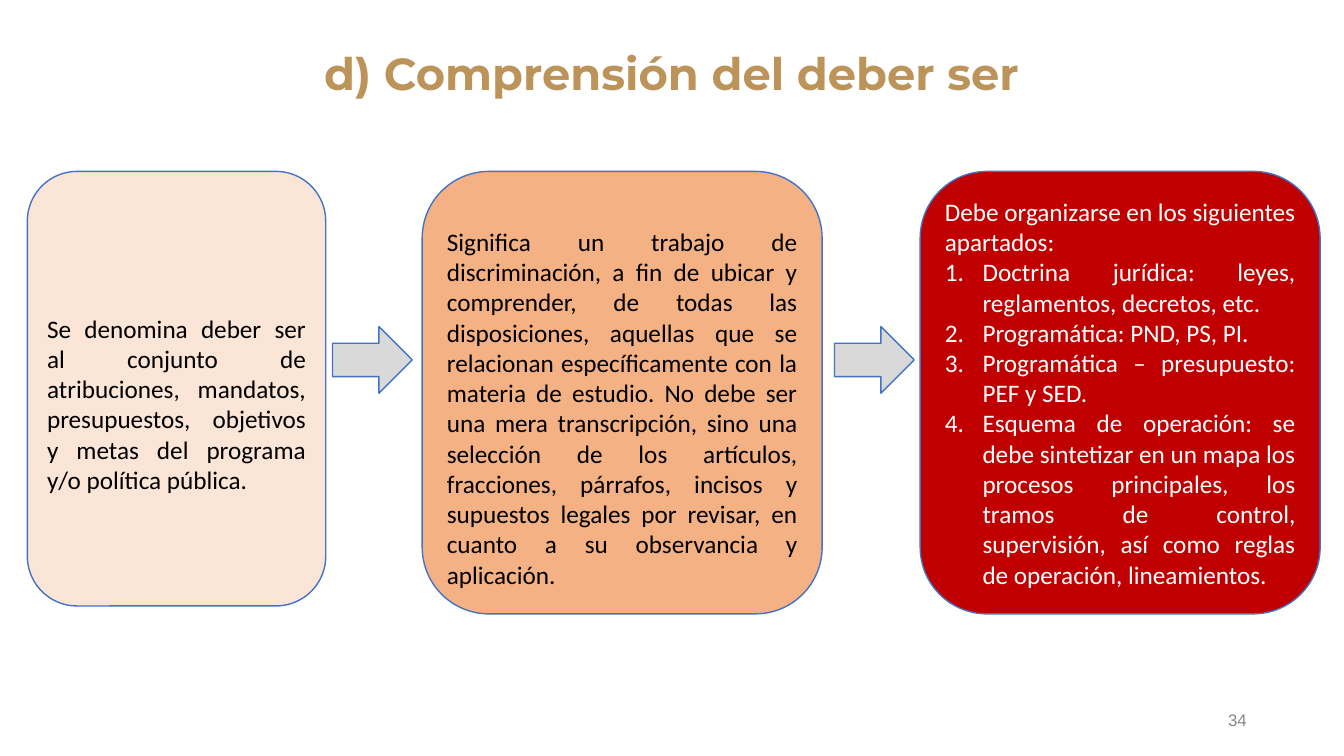
from lxml.etree import SubElement
from pptx import Presentation
from pptx.dml.color import RGBColor
from pptx.enum.shapes import MSO_SHAPE as Preset
from pptx.enum.text import MSO_ANCHOR as Anchor, MSO_AUTO_SIZE as AutoSize, PP_ALIGN as Align
from pptx.oxml.ns import qn
from pptx.util import Cm, Pt

COLOURS = {
    "title": "BC945A", "outline": "4472C4", "arrow": "D9D9D9",
    "peach": "FBE5D6", "orange": "F4B183", "red": "C00000",
    "black": "000000", "white": "FFFFFF", "grey": "888888",
}
TOP = 4.32
INSET = 0.13
LINE = 0.76  # height of one line of body text


def colour(name):
    return RGBColor.from_string(COLOURS[name])


class SlideBuilder:
    body_font, body_size = "Calibri", 18
    indent = Cm(0.95)

    def __init__(self, slide):
        self.slide = slide

    def frame(self, frame, anchor, wrap=True, drop=0):
        frame.word_wrap = wrap
        frame.auto_size = AutoSize.NONE
        frame.vertical_anchor = anchor
        frame.margin_left = frame.margin_right = frame.margin_bottom = Cm(INSET)
        frame.margin_top = Cm(INSET + drop)
        return frame

    def add_text(self, paragraph, text, align, font, size, ink, bold=False):
        paragraph.alignment = align
        run = paragraph.add_run()
        run.text = text
        run.font.name, run.font.size, run.font.bold = font, Pt(size), bold
        run.font.color.rgb = colour(ink)

    def title(self, text):
        heading = self.slide.shapes.title
        heading.left, heading.top = Cm(2.31), Cm(0.97)
        heading.width, heading.height = Cm(29.24), Cm(1.68)
        line = self.frame(heading.text_frame, Anchor.BOTTOM).paragraphs[0]
        line.line_spacing = 0.9
        self.add_text(line, text, Align.CENTER, "Montserrat", 32, "title", True)

    def page_number(self, text):
        number = self.slide.shapes.add_textbox(Cm(30.81), Cm(17.78), Cm(0.74), Cm(0.74))
        line = self.frame(number.text_frame, Anchor.MIDDLE, wrap=False).paragraphs[0]
        self.add_text(line, text, Align.RIGHT, "Arial", 12, "grey")

    def shape(self, preset, left, top, width, height, fill):
        shape = self.slide.shapes.add_shape(preset, Cm(left), Cm(top), Cm(width), Cm(height))
        shape.shadow.inherit = False
        shape.fill.solid()
        shape.fill.fore_color.rgb = colour(fill)
        shape.line.color.rgb = colour("outline")
        shape.line.width = Pt(1)
        return shape

    def arrow(self, left):
        self.shape(Preset.RIGHT_ARROW, left, 8.23, 2.01, 1.68, "arrow")

    def card(self, left, width, height, fill, ink, intro, steps=(), drop=0):
        card = self.shape(Preset.ROUNDED_RECTANGLE, left, TOP, width, height, fill)
        frame = self.frame(card.text_frame, Anchor.MIDDLE, drop=drop)
        style = (Align.JUSTIFY, self.body_font, self.body_size, ink)
        self.add_text(frame.paragraphs[0], intro, *style)
        for step in steps:
            item = frame.add_paragraph()
            self.number(item)
            self.add_text(item, step, *style)

    def number(self, paragraph):
        props = paragraph._p.get_or_add_pPr()
        props.set("marL", str(self.indent))
        props.set("indent", str(-self.indent))
        SubElement(props, qn("a:buFont"), typeface="+mj-lt")
        SubElement(props, qn("a:buAutoNum"), type="arabicPeriod")


def main():
    deck = Presentation()
    deck.slide_width, deck.slide_height = Cm(33.87), Cm(19.05)
    page = SlideBuilder(deck.slides.add_slide(deck.slide_layouts[5]))

    # Heading and page number
    page.title("d) Comprensión del deber ser")
    page.page_number("34")

    # Definition
    page.card(
        0.69, 7.52, 10.95, "peach", "black",
        "Se denomina deber ser al conjunto de atribuciones, mandatos, presupuestos, "
        "objetivos y metas del programa y/o política pública.",
        drop=LINE)

    # Meaning
    page.card(
        10.64, 10.08, 11.15, "orange", "black",
        "Significa un trabajo de discriminación, a fin de ubicar y comprender, de todas "
        "las disposiciones, aquellas que se relacionan específicamente con la materia de "
        "estudio. No debe ser una mera transcripción, sino una selección de los artículos, "
        "fracciones, párrafos, incisos y supuestos legales por revisar, en cuanto a su "
        "observancia y aplicación.",
        drop=LINE)

    # Sections to organise
    page.card(
        23.19, 10.08, 11.15, "red", "white",
        "Debe organizarse en los siguientes apartados:",
        ["Doctrina jurídica: leyes, reglamentos, decretos, etc.",
         "Programática: PND, PS, PI.",
         "Programática – presupuesto: PEF y SED.",
         "Esquema de operación: se debe sintetizar en un mapa los procesos principales, "
         "los tramos de control, supervisión, así como reglas de operación, lineamientos."])

    # Arrows between the cards
    for left in (8.38, 21.03):
        page.arrow(left)

    deck.save("out.pptx")


if __name__ == "__main__":
    main()
